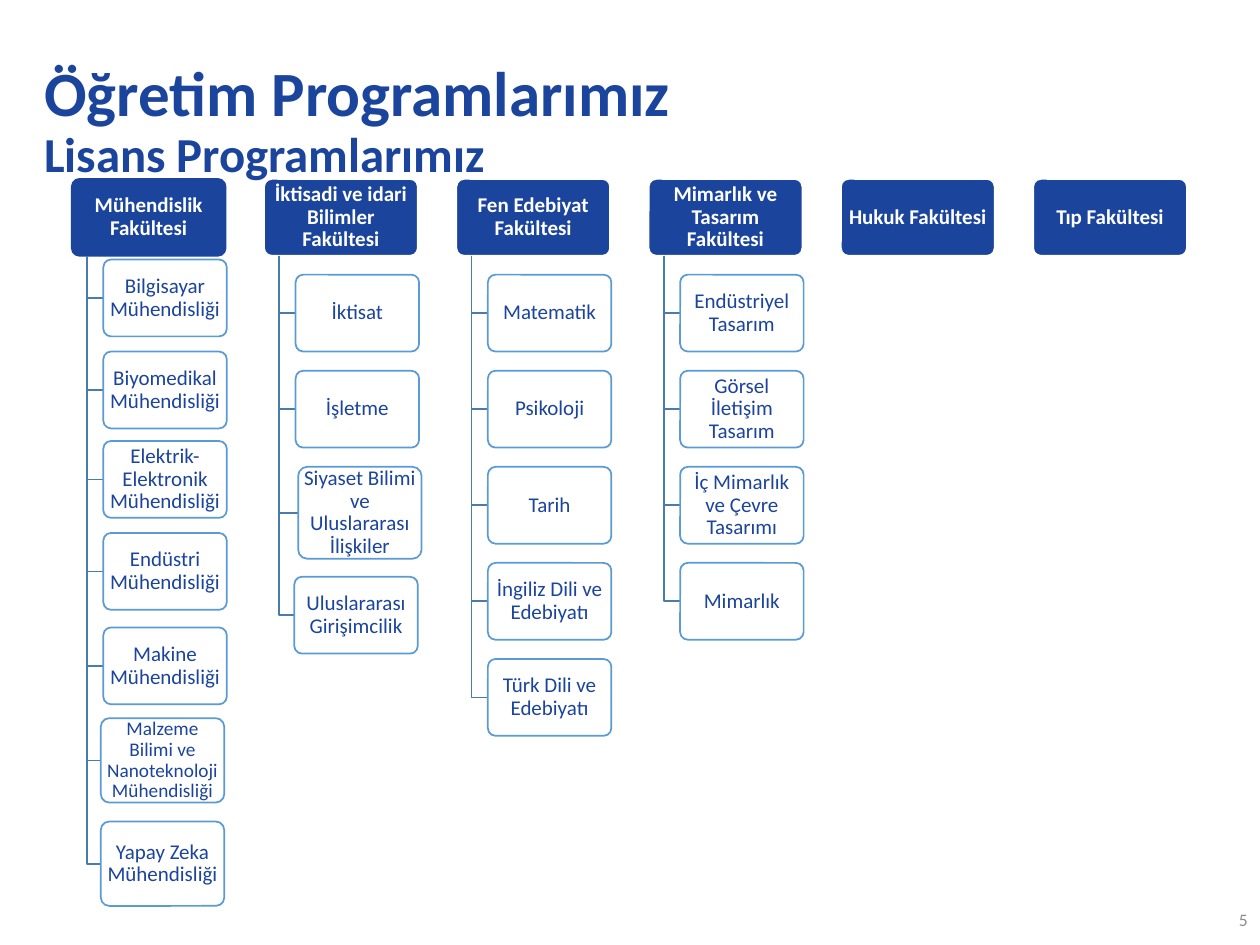
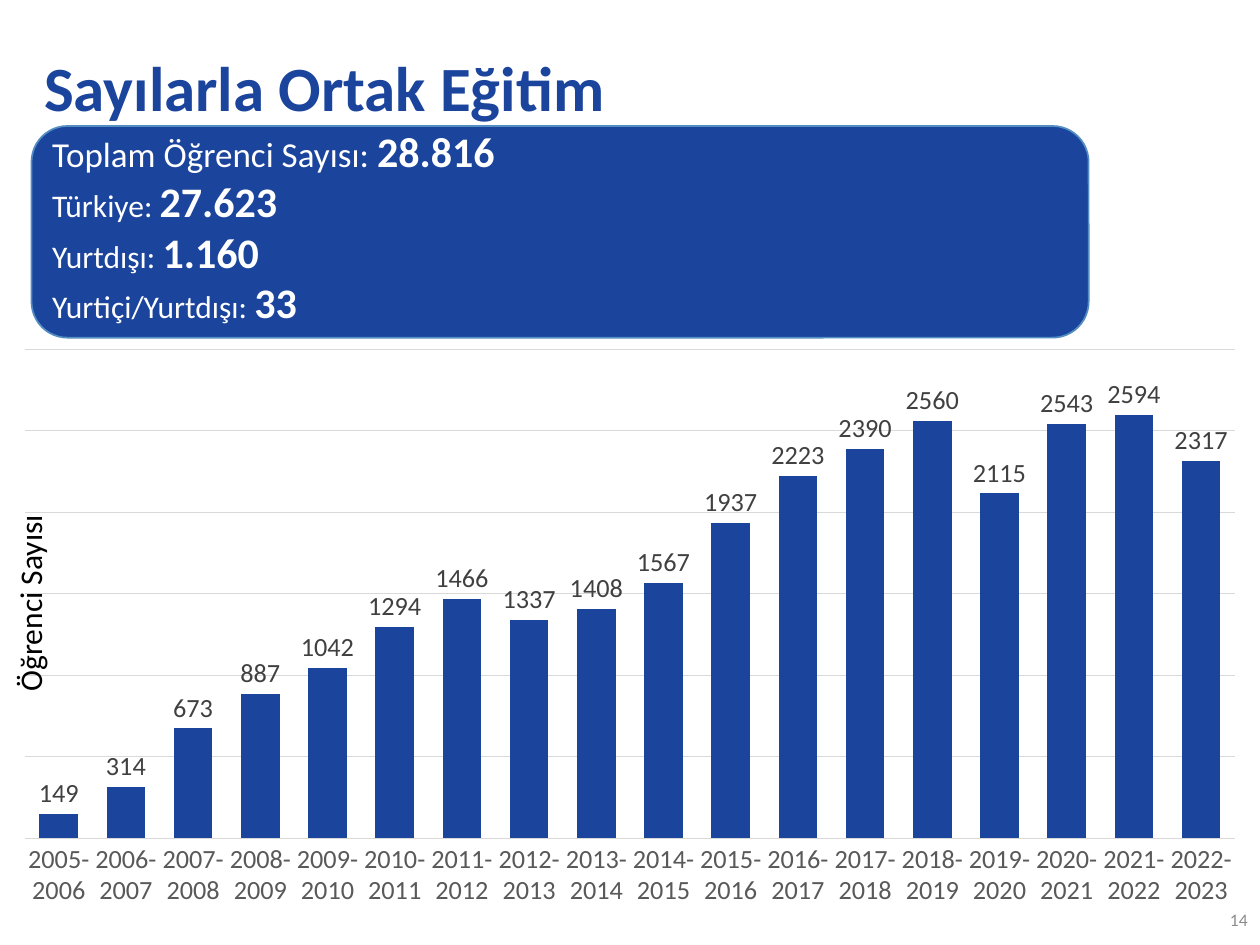
import dataclasses
import typing

import pptx
import pptx.chart.data
import pptx.dml.color
import pptx.enum.chart
import pptx.enum.shapes
import pptx.enum.text
import pptx.oxml.ns
import pptx.util
from lxml import etree

ALIGN = pptx.enum.text.PP_ALIGN
ANCHOR = pptx.enum.text.MSO_ANCHOR
ROUNDED = pptx.enum.shapes.MSO_SHAPE.ROUNDED_RECTANGLE
CHART = pptx.enum.chart
Pt = pptx.util.Pt
qn = pptx.oxml.ns.qn

# The slide is a grid of 10 columns by 7.5 rows of square cells.
COLUMNS, ROWS = 10, 7.5
CELL = pptx.util.Inches(1)


@dataclasses.dataclass(frozen=True)
class Theme:
    font: str = "Calibri"
    navy: str = "1B449C"
    white: str = "FFFFFF"
    black: str = "000000"
    border: str = "5B9BD5"
    card_border: str = "538DC1"
    branch: str = "497CAB"
    page: str = "8C8C8C"
    grid: str = "D9D9D9"
    axis_text: str = "595959"
    label_text: str = "404040"
    title: float = 36
    subtitle: float = 27.9
    total: float = 20
    body: float = 18
    figure: float = 24
    chart: float = 15
    node: float = 12
    small_node: float = 11
    footer: float = 10


THEME = Theme()


class Box(typing.NamedTuple):
    left: float
    top: float
    width: float
    height: float

    def emu(self) -> list[int]:
        return [cells(v) for v in self]


class Run(typing.NamedTuple):
    text: str
    size: float
    color: str = THEME.white
    bold: bool = False


class Programme(typing.NamedTuple):
    """A programme box; dx and dy move it off its place in the column."""
    name: str
    dx: float = 0
    dy: float = 0
    height: float = 0.61
    size: float = THEME.node


class Faculty(typing.NamedTuple):
    name: str
    programmes: tuple[Programme, ...] = ()
    first_top: float = 2.18
    pitch: float = (5.23 - 2.18) / 4
    border: str = THEME.white


TITLE_BOX = Box(0.25, 0, 8.62, 1.45)
PAGE_BOX = Box(7.75, 7.1, 2.25, 0.4)
HEADING = Box(0.57, 1.42, 1.22, 0.61)
FACULTY_PITCH = (8.2 - HEADING.left) / 5
TRUNK_INDENT, NODE_INDENT, NODE_WIDTH = 0.12, 0.25, 0.98
NODE_SIDE_MARGIN, NODE_END_MARGIN = Pt(1.8), Pt(1.2)

FACULTIES = [
    Faculty("Mühendislik Fakültesi", (
        Programme("Bilgisayar Mühendisliği"),
        Programme("Biyomedikal Mühendisliği"),
        Programme("Elektrik-Elektronik Mühendisliği", dy=-0.02),
        Programme("Endüstri Mühendisliği", dy=-0.02),
        Programme("Makine Mühendisliği"),
        Programme("Malzeme Bilimi ve Nanoteknoloji Mühendisliği",
                  -0.02, -0.01, 0.67, THEME.small_node),
        Programme("Yapay Zeka Mühendisliği", -0.02, 0.08, 0.67),
    ), first_top=2.06, pitch=0.73, border=THEME.navy),
    Faculty("İktisadi ve idari Bilimler Fakültesi", (
        Programme("İktisat"),
        Programme("İşletme"),
        Programme("Siyaset Bilimi ve Uluslararası İlişkiler", 0.02, height=0.73),
        Programme("Uluslararası Girişimcilik", -0.01, 0.11),
    )),
    Faculty("Fen Edebiyat Fakültesi", (
        Programme("Matematik"),
        Programme("Psikoloji"),
        Programme("Tarih"),
        Programme("İngiliz Dili ve Edebiyatı"),
        Programme("Türk Dili ve Edebiyatı"),
    )),
    Faculty("Mimarlık ve Tasarım Fakültesi", (
        Programme("Endüstriyel Tasarım"),
        Programme("Görsel İletişim Tasarım"),
        Programme("İç Mimarlık ve Çevre Tasarımı"),
        Programme("Mimarlık"),
    )),
    Faculty("Hukuk Fakültesi"),
    Faculty("Tıp Fakültesi"),
]

TOTALS = [
    ("Toplam Öğrenci Sayısı: ", "28.816", THEME.total),
    ("Türkiye: ", "27.623", THEME.body),
    ("Yurtdışı: ", "1.160", THEME.body),
    ("Yurtiçi/Yurtdışı: ", "33", THEME.body),
]
FIRST_YEAR = 2005
STUDENTS = [149, 314, 673, 887, 1042, 1294, 1466, 1337, 1408,
            1567, 1937, 2223, 2390, 2560, 2115, 2543, 2594, 2317]


def cells(n: float) -> int:
    return round(n * CELL)


def rgb(color: str) -> pptx.dml.color.RGBColor:
    return pptx.dml.color.RGBColor.from_string(color)


def assign(obj: typing.Any, values: dict[str, typing.Any]) -> None:
    for name, value in values.items():
        setattr(obj, name, value)


def style_font(font: typing.Any, size: float, color: str, bold: bool = False) -> None:
    assign(font, {"name": THEME.font, "size": Pt(size), "bold": bold})
    font.color.rgb = rgb(color)


def style_line(line: typing.Any, color: str, width: float = 1) -> None:
    line.color.rgb = rgb(color)
    line.width = Pt(width)


def write(tf: typing.Any, lines: list[list[Run]], align: ALIGN = ALIGN.LEFT,
          spacing: float = 1, **frame: typing.Any) -> None:
    """Fill a text frame, one paragraph for each list of runs."""
    assign(tf, {"word_wrap": True, "auto_size": pptx.enum.text.MSO_AUTO_SIZE.NONE,
                "vertical_anchor": ANCHOR.MIDDLE} | frame)
    for i, line in enumerate(lines):
        p = tf.add_paragraph() if i else tf.paragraphs[0]
        assign(p, {"alignment": align, "line_spacing": spacing})
        for run in line:
            r = p.add_run()
            r.text = run.text
            style_font(r.font, run.size, run.color, run.bold)


def add_panel(s: typing.Any, box: Box, fill: str, border: str, radius: float) -> typing.Any:
    sp = s.shapes.add_shape(ROUNDED, *box.emu())
    sp.shadow.inherit = False
    sp.adjustments[0] = radius
    sp.fill.solid()
    sp.fill.fore_color.rgb = rgb(fill)
    style_line(sp.line, border)
    return sp


def add_node(s: typing.Any, box: Box, run: Run, fill: str, border: str) -> typing.Any:
    sp = add_panel(s, box, fill, border, 0.1)
    write(sp.text_frame, [[run]], ALIGN.CENTER, 0.9,
          margin_left=NODE_SIDE_MARGIN, margin_right=NODE_SIDE_MARGIN,
          margin_top=NODE_END_MARGIN, margin_bottom=NODE_END_MARGIN)
    return sp


def add_branch(s: typing.Any, trunk: float, top: float, node: Box) -> None:
    """Draw an elbow from the heading's lower edge to the node's left side."""
    middle = node.top + node.height / 2
    builder = s.shapes.build_freeform(cells(trunk), cells(top))
    builder.add_line_segments([(cells(trunk), cells(middle)),
                               (cells(node.left), cells(middle))], close=False)
    sp = builder.convert_to_shape()
    sp.shadow.inherit = False
    sp.fill.background()
    style_line(sp.line, THEME.branch)


def add_faculty(s: typing.Any, index: int, faculty: Faculty) -> None:
    left = HEADING.left + index * FACULTY_PITCH
    add_node(s, HEADING._replace(left=left),
             Run(faculty.name, THEME.node, bold=True), THEME.navy, faculty.border)
    for row, item in enumerate(faculty.programmes):
        box = Box(left + NODE_INDENT + item.dx,
                  faculty.first_top + row * faculty.pitch + item.dy,
                  NODE_WIDTH, item.height)
        add_branch(s, left + TRUNK_INDENT, HEADING.top + HEADING.height, box)
        sp = add_node(s, box, Run(item.name, item.size, THEME.navy),
                      THEME.white, THEME.border)
        color = sp.fill._xPr.find(f"{qn('a:solidFill')}/{qn('a:srgbClr')}")
        etree.SubElement(color, qn("a:alpha"), val="90000")


def add_text(s: typing.Any, box: Box, run: Run, align: ALIGN = ALIGN.LEFT,
             **frame: typing.Any) -> typing.Any:
    sp = s.shapes.add_textbox(*box.emu())
    write(sp.text_frame, [[run]], align, **frame)
    return sp


def add_titled_slide(prs: typing.Any, page: str, *lines: tuple[str, float],
                     **frame: typing.Any) -> typing.Any:
    s = prs.slides.add_slide(prs.slide_layouts[5])
    title = s.shapes.title
    assign(title, dict(zip(("left", "top", "width", "height"), TITLE_BOX.emu())))
    write(title.text_frame, [[Run(text, size, THEME.navy, True)] for text, size in lines],
          spacing=0.9, **frame)
    add_text(s, PAGE_BOX, Run(page, THEME.footer, THEME.page), ALIGN.RIGHT)
    return s


def set_plot_area(chart: typing.Any, x: float, y: float, w: float, h: float) -> None:
    """Fix the inner plot area, in shares of the chart's size."""
    area = chart._chartSpace.chart.plotArea
    for old in area.findall(qn("c:layout")):
        area.remove(old)
    layout = etree.Element(qn("c:layout"))
    area.insert(0, layout)
    manual = etree.SubElement(layout, qn("c:manualLayout"))
    values = {"layoutTarget": "inner", "xMode": "edge", "yMode": "edge",
              "x": x, "y": y, "w": w, "h": h}
    for name, value in values.items():
        etree.SubElement(manual, qn(f"c:{name}"), val=str(value))


def add_student_chart(s: typing.Any, box: Box) -> None:
    data = pptx.chart.data.CategoryChartData()
    data.categories = [f"{y}-{y + 1}" for y in range(FIRST_YEAR, FIRST_YEAR + len(STUDENTS))]
    data.add_series("Series 1", STUDENTS)
    chart = s.shapes.add_chart(CHART.XL_CHART_TYPE.COLUMN_CLUSTERED, *box.emu(), data).chart
    assign(chart, {"has_legend": False, "has_title": False})
    style_font(chart.font, THEME.chart, THEME.black)
    set_plot_area(chart, 0.02, 0.02, 0.96, 0.84)

    years, counts = chart.category_axis, chart.value_axis
    years.major_tick_mark = CHART.XL_TICK_MARK.NONE
    style_font(years.tick_labels.font, THEME.chart, THEME.axis_text)
    style_line(years.format.line, THEME.grid, 0.75)
    assign(counts, {"visible": False, "minimum_scale": 0, "maximum_scale": 3000,
                    "major_unit": 500, "has_major_gridlines": True})
    style_line(counts.major_gridlines.format.line, THEME.grid, 0.75)

    plot = chart.plots[0]
    assign(plot, {"gap_width": 74, "overlap": -27, "vary_by_categories": False,
                  "has_data_labels": True})
    assign(plot.data_labels, {"show_value": True,
                              "position": CHART.XL_LABEL_POSITION.OUTSIDE_END})
    style_font(plot.data_labels.font, THEME.chart, THEME.label_text)
    fill = plot.series[0].format.fill
    fill.solid()
    fill.fore_color.rgb = rgb(THEME.navy)


def build_programmes(prs: typing.Any) -> None:
    s = add_titled_slide(prs, "5", ("Öğretim Programlarımız", THEME.title),
                         ("Lisans Programlarımız", THEME.subtitle),
                         vertical_anchor=ANCHOR.BOTTOM, margin_bottom=0)
    for index, faculty in enumerate(FACULTIES):
        add_faculty(s, index, faculty)


def build_student_numbers(prs: typing.Any) -> None:
    s = add_titled_slide(prs, "14", ("Sayılarla Ortak Eğitim", THEME.title))
    add_student_chart(s, Box(0, 2.68, COLUMNS, 4.62))
    card = add_panel(s, Box(0.25, 1, 8.39, 1.68), THEME.navy, THEME.card_border, 0.17)
    write(card.text_frame,
          [[Run(label, size), Run(value, THEME.figure, bold=True)]
           for label, value, size in TOTALS],
          margin_left=cells(0.08), margin_top=0, margin_bottom=cells(0.09))
    axis_name = add_text(s, Box(-0.79, 4.2, 2.21, 0.56),
                         Run("Öğrenci Sayısı", THEME.body, THEME.black),
                         vertical_anchor=ANCHOR.TOP)
    axis_name.rotation = 270


def main() -> None:
    prs = pptx.Presentation()
    assign(prs, {"slide_width": cells(COLUMNS), "slide_height": cells(ROWS)})
    build_programmes(prs)
    build_student_numbers(prs)
    prs.save("out.pptx")


if __name__ == "__main__":
    main()
